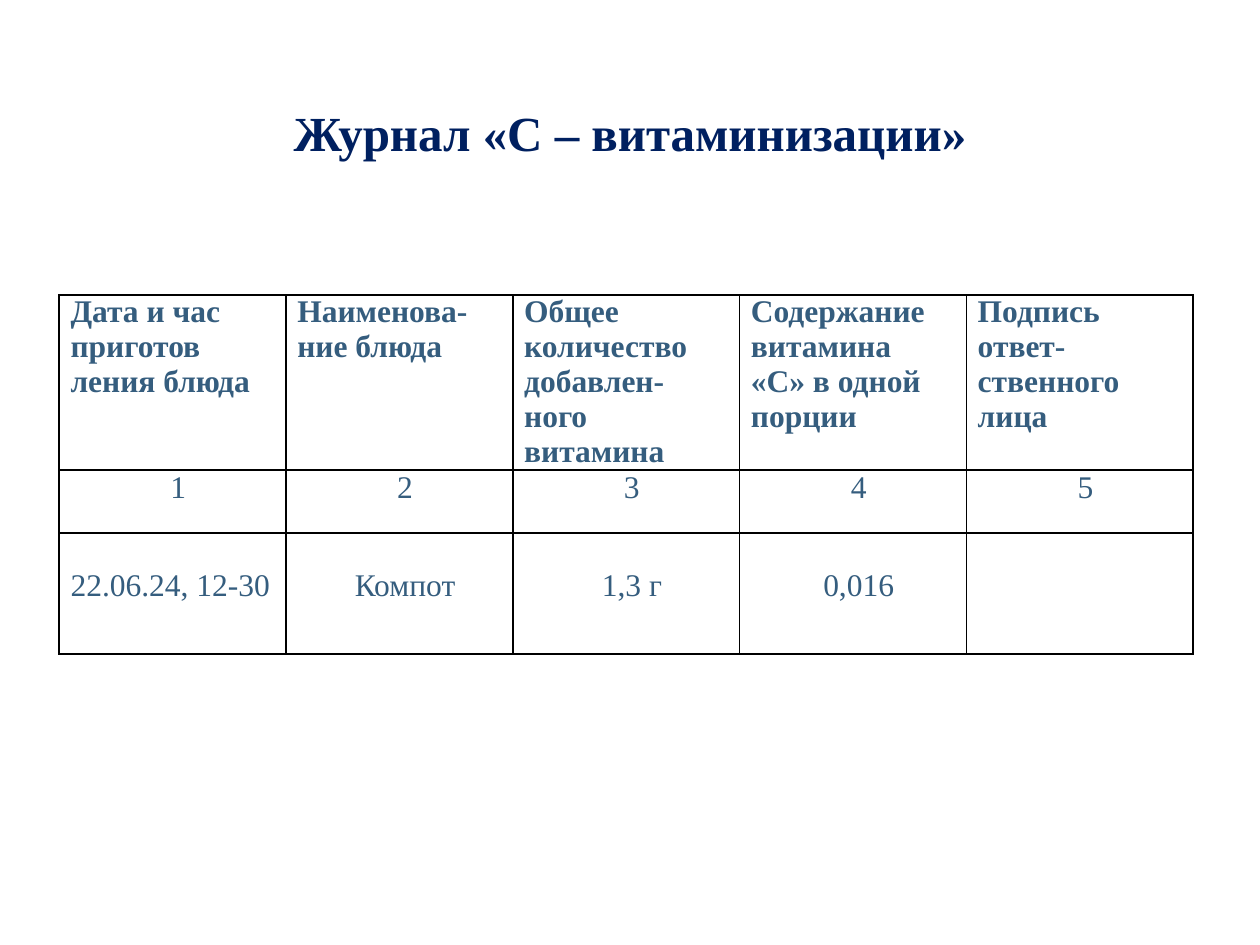
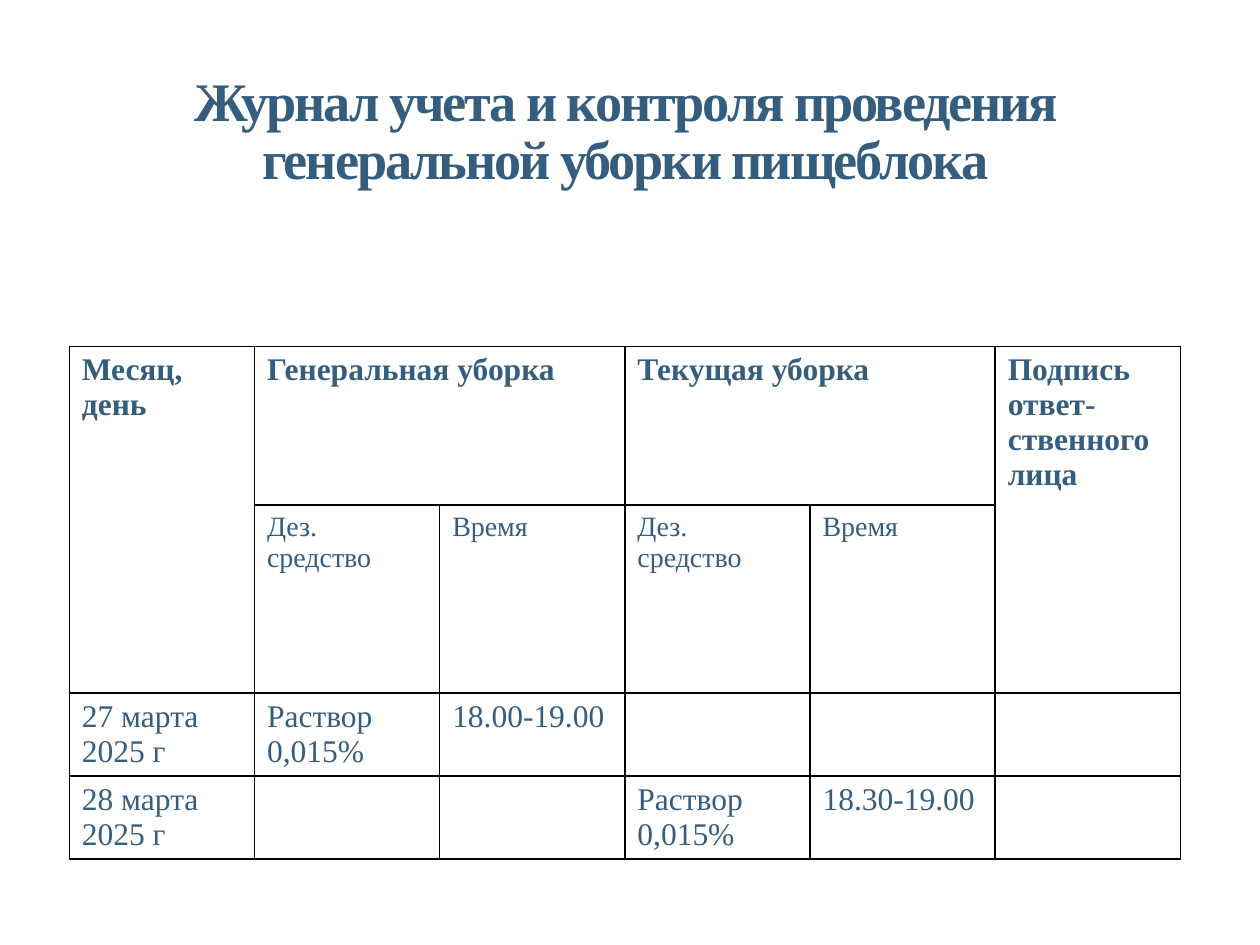
import pptx
import pptx.util
import pptx.dml.color
import pptx.enum.text
import pptx.oxml
import pptx.oxml.ns

Inches = pptx.util.Inches
PP_ALIGN = pptx.enum.text.PP_ALIGN

FONT = "Times New Roman"
COLORS = {"navy": "002060", "steel": "355D7E", "border": "000000"}
BORDER_PT = 1
TITLE_ONLY = 5


def write_text(frame, text, size=18, color="steel", bold=False,
               align=PP_ALIGN.LEFT, line_spacing=None, tracking=None):
    """Fill a text frame with one formatted paragraph."""
    paragraph = frame.paragraphs[0]
    paragraph.alignment = align
    if line_spacing:
        paragraph.line_spacing = line_spacing
    run = paragraph.add_run()
    run.text = text
    run.font.name = FONT
    run.font.size = pptx.util.Pt(size)
    run.font.bold = bold
    run.font.color.rgb = pptx.dml.color.RGBColor.from_string(COLORS[color])
    if tracking:
        run.font._element.set("spc", str(round(tracking * 100)))


def add_title(slide, text, box, raise_by, **text_format):
    """Place the title in its box, lifted above the middle by raise_by."""
    title = slide.shapes.title
    title.left, title.top, title.width, title.height = map(Inches, box)
    frame = title.text_frame
    frame.word_wrap = True
    frame.auto_size = pptx.enum.text.MSO_AUTO_SIZE.NONE
    frame.vertical_anchor = pptx.enum.text.MSO_ANCHOR.MIDDLE
    frame.margin_bottom = Inches(0.05 + 2 * raise_by)
    write_text(frame, text, bold=True, align=PP_ALIGN.CENTER,
               line_spacing=0.9, **text_format)


def outline_cell(cell):
    """Give a cell four plain borders and no fill."""
    properties = cell._tc.get_or_add_tcPr()
    for side in "LRTB":
        properties.append(pptx.oxml.parse_xml(
            f'<a:ln{side} {pptx.oxml.ns.nsdecls("a")} w="{BORDER_PT * 12700}">'
            f'<a:solidFill><a:srgbClr val="{COLORS["border"]}"/></a:solidFill>'
            f'</a:ln{side}>'))
    cell.fill.background()


def add_grid(slide, left, top, width, row_heights, column_count):
    """Add an outlined table with equal columns."""
    grid = slide.shapes.add_table(
        len(row_heights), column_count, Inches(left), Inches(top),
        Inches(width), Inches(sum(row_heights))).table
    grid.first_row = grid.horz_banding = False
    for column in grid.columns:
        column.width = Inches(width / column_count)
    for row, height in zip(grid.rows, row_heights):
        row.height = Inches(height)
    for cell in grid.iter_cells():
        outline_cell(cell)
    return grid


def fill_row(grid, row, texts, **text_format):
    for column, text in enumerate(texts):
        if text:
            write_text(grid.cell(row, column).text_frame, text, **text_format)


def build_vitamin_log(slide):
    add_title(slide, "Журнал «С – витаминизации»", (0.5, 0.77, 9, 1.09),
              raise_by=0.24, size=28, color="navy")
    log = add_grid(slide, 0.47, 2.34, 9, [1.39, 0.5, 0.96], 5)
    for cell in log.iter_cells():
        cell.margin_left = Inches(0.09)
        cell.margin_right = cell.margin_top = cell.margin_bottom = 0

    # Header, with a right margin that sets its line breaks
    fill_row(log, 0, ["Дата и час приготов ления блюда",
                      "Наименова- ние блюда",
                      "Общее количество добавлен- ного витамина",
                      "Содержание витамина «С» в одной порции",
                      "Подпись ответ- ственного лица"], bold=True)
    for cell in log.rows[0].cells:
        cell.margin_right = Inches(0.15)
    fill_row(log, 1, [str(number) for number in range(1, 6)],
             align=PP_ALIGN.CENTER)

    # The entry sits one line below the top of its row
    fill_row(log, 2, ["22.06.24, 12-30"])
    fill_row(log, 2, ["", "Компот", "1,3 г", "0,016"], align=PP_ALIGN.CENTER)
    for cell in log.rows[2].cells:
        cell.margin_top = Inches(0.28)


def build_cleaning_log(slide):
    add_title(slide,
              "Журнал учета и контроля проведения генеральной уборки пищеблока",
              (0.54, 0.55, 8.84, 1.81), raise_by=0.4, size=31, tracking=-1.2)
    log = add_grid(slide, 0.55, 2.75, 8.82, [1.26, 1.49, 0.66, 0.66], 6)

    # Two-level header
    for first, last in [((0, 0), (1, 0)), ((0, 1), (0, 2)),
                        ((0, 3), (0, 4)), ((0, 5), (1, 5))]:
        log.cell(*first).merge(log.cell(*last))
    fill_row(log, 0, ["Месяц, день", "Генеральная уборка", "",
                      "Текущая уборка", "", "Подпись ответ- ственного лица"],
             bold=True)
    fill_row(log, 1, [""] + ["Дез. средство", "Время"] * 2, size=16)

    # Entries
    agent = "Раствор 0,015%"
    fill_row(log, 2, ["27 марта 2025 г", agent, "18.00-19.00"])
    fill_row(log, 3, ["28 марта 2025 г", "", "", agent, "18.30-19.00"])


def main():
    deck = pptx.Presentation()
    deck.slide_width, deck.slide_height = Inches(10), Inches(7.5)
    for build in (build_vitamin_log, build_cleaning_log):
        build(deck.slides.add_slide(deck.slide_layouts[TITLE_ONLY]))
    deck.save("out.pptx")


if __name__ == "__main__":
    main()
